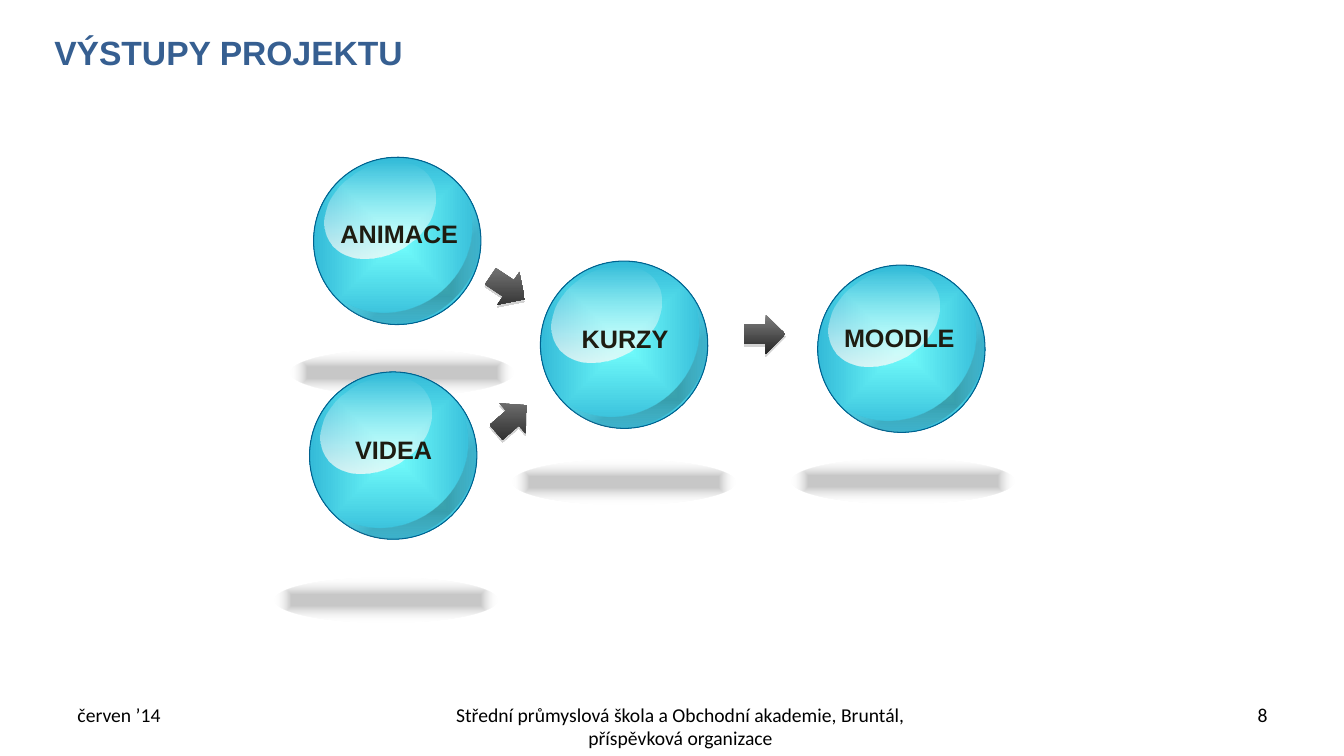
from lxml import etree
from pptx import Presentation
from pptx.dml.color import RGBColor
from pptx.enum.shapes import MSO_SHAPE as Shape
from pptx.enum.text import MSO_ANCHOR as Anchor, PP_ALIGN as Align
from pptx.oxml import parse_xml
from pptx.oxml.ns import nsdecls, qn
from pptx.util import Inches, Pt

COLORS = {
    "title": "365F91",
    "label": "1E1C11",
    "footer": "000000",
    "outline": "00618E",
    "ball_center": "74FFFD",
    "ball_edge": "20A6CD",
    "black": "000000",
    "white": "FFFFFF",
    "gloss": "FFFCF9",
    "arrow_light": "7F7F7F",
    "arrow_dark": "262626",
    "arrow_shadow": "808080",
}

# Gradient stops: position in percent, colour, opacity in percent
BALL_STOPS = [(0, "ball_center", 100), (100, "ball_edge", 100)]
SHADE_STOPS = [(24, "black", 24), (100, "white", 0)]
FLOOR_STOPS = [(24, "black", 22), (100, "white", 0)]
GLOSS_STOPS = [(0, "white", 0), (100, "gloss", 77)]
ARROW_STOPS = [(0, "arrow_light", 100), (100, "arrow_dark", 100)]

BALL_SIZE = 1.66
# Label, ball left and top, label left, top and width, floor shadow left and top
BALLS = [
    ("KURZY", 5.36, 2.59, (5.58, 3.16, 1.24), (5.08, 4.56)),
    ("ANIMACE", 3.11, 1.56, (3.17, 2.12, 1.58), (2.88, 3.47)),
    ("VIDEA", 3.07, 3.69, (3.05, 4.26, 1.71), (2.72, 5.73)),
    ("MOODLE", 8.11, 2.63, (8.13, 3.15, 1.58), (7.85, 4.55)),
]
# Left, top, rotation
ARROWS = [(4.83, 2.66, 33.8), (4.87, 3.96, 319.1), (7.38, 3.12, 0)]


def gradient(stops, centered):
    """Gradient fill element, from the centre outwards or from top to bottom."""
    stop_xml = "".join(
        f'<a:gs pos="{position * 1000}"><a:srgbClr val="{COLORS[color]}">'
        f'<a:alpha val="{opacity * 1000}"/></a:srgbClr></a:gs>'
        for position, color, opacity in stops)
    if centered:
        course = ('<a:path path="shape"><a:fillToRect l="50000" t="50000" '
                  'r="50000" b="50000"/></a:path>')
    else:
        course = '<a:lin ang="5400000" scaled="0"/>'
    return parse_xml(f'<a:gradFill {nsdecls("a")} rotWithShape="0">'
                     f'<a:gsLst>{stop_xml}</a:gsLst>{course}</a:gradFill>')


class SlideWriter:
    def __init__(self, page):
        self.page = page

    def text(self, text, left, top, width, height, *, size=14, font="Calibri",
             color="footer", bold=False, align=Align.LEFT, anchor=Anchor.TOP):
        box = self.page.shapes.add_textbox(
            Inches(left), Inches(top), Inches(width), Inches(height))
        frame = box.text_frame
        frame.word_wrap = True
        frame.vertical_anchor = anchor
        para = frame.paragraphs[0]
        para.alignment = align
        span = para.add_run()
        span.text = text
        span.font.size = Pt(size)
        span.font.name = font
        span.font.bold = bold
        span.font.color.rgb = RGBColor.from_string(COLORS[color])

    def shape(self, kind, left, top, width, height, stops, *, centered=True,
              rotation=0, flipped=False, outline=None, parent=None):
        shapes = (parent or self.page).shapes
        item = shapes.add_shape(
            kind, Inches(left), Inches(top), Inches(width), Inches(height))
        item.shadow.inherit = False
        item.rotation = rotation
        properties = item.element.spPr
        if flipped:
            properties.find(qn("a:xfrm")).set("flipH", "1")
        item.fill.solid()
        properties.replace(properties.find(qn("a:solidFill")),
                           gradient(stops, centered))
        if outline:
            item.line.color.rgb = RGBColor.from_string(COLORS[outline])
            item.line.width = Pt(0.75)
        else:
            item.line.fill.background()
        return item

    def floor_shadow(self, left, top):
        self.shape(Shape.OVAL, left, top, 2.21, 0.45, FLOOR_STOPS)

    def ball(self, left, top):
        group = self.page.shapes.add_group_shape()
        self.shape(Shape.OVAL, left, top, BALL_SIZE, BALL_SIZE, BALL_STOPS,
                   rotation=338.6, flipped=True, outline="outline", parent=group)
        shade = self.shape(Shape.MOON, left + 0.72, top + 0.38, 0.73, 1.61,
                           SHADE_STOPS, rotation=53.6, flipped=True, parent=group)
        shade.adjustments[0] = 0.19
        self.shape(Shape.OVAL, left + 0.07, top + 0.09, 1.17, 0.87, GLOSS_STOPS,
                   centered=False, rotation=329.4, flipped=True, parent=group)

    def arrow(self, left, top, rotation):
        item = self.shape(Shape.RIGHT_ARROW, left, top, 0.41, 0.39, ARROW_STOPS,
                          centered=False, rotation=rotation)
        effects = item.element.spPr.find(qn("a:effectLst"))
        shadow = etree.SubElement(effects, qn("a:outerShdw"), blurRad="0",
                                  dist=str(Pt(1.8)), dir="5400000",
                                  rotWithShape="0")
        color = etree.SubElement(shadow, qn("a:srgbClr"),
                                 val=COLORS["arrow_shadow"])
        etree.SubElement(color, qn("a:alpha"), val="35000")


def main():
    deck = Presentation()
    deck.slide_width = Inches(13.33)
    deck.slide_height = Inches(7.5)
    writer = SlideWriter(deck.slides.add_slide(deck.slide_layouts[6]))

    writer.text("VÝSTUPY PROJEKTU", 0.44, 0.17, 11.22, 0.7, size=24,
                font="Arial", color="title", bold=True, anchor=Anchor.MIDDLE)
    for *_, floor in BALLS:
        writer.floor_shadow(*floor)
    for label, left, top, (label_left, label_top, label_width), _ in BALLS:
        writer.ball(left, top)
        writer.text(label, label_left, label_top, label_width, 0.71, size=18,
                    font="Arial", color="label", bold=True, align=Align.CENTER)
    for arrow in ARROWS:
        writer.arrow(*arrow)

    writer.text("červen ’14", 0.67, 6.92, 3.11, 0.44)
    writer.text("Střední průmyslová škola a Obchodní akademie, Bruntál, "
                "příspěvková organizace", 4.25, 6.92, 5, 0.43,
                align=Align.CENTER)
    writer.text("8", 9.56, 6.92, 3.11, 0.43, align=Align.RIGHT)
    deck.save("out.pptx")


if __name__ == "__main__":
    main()
